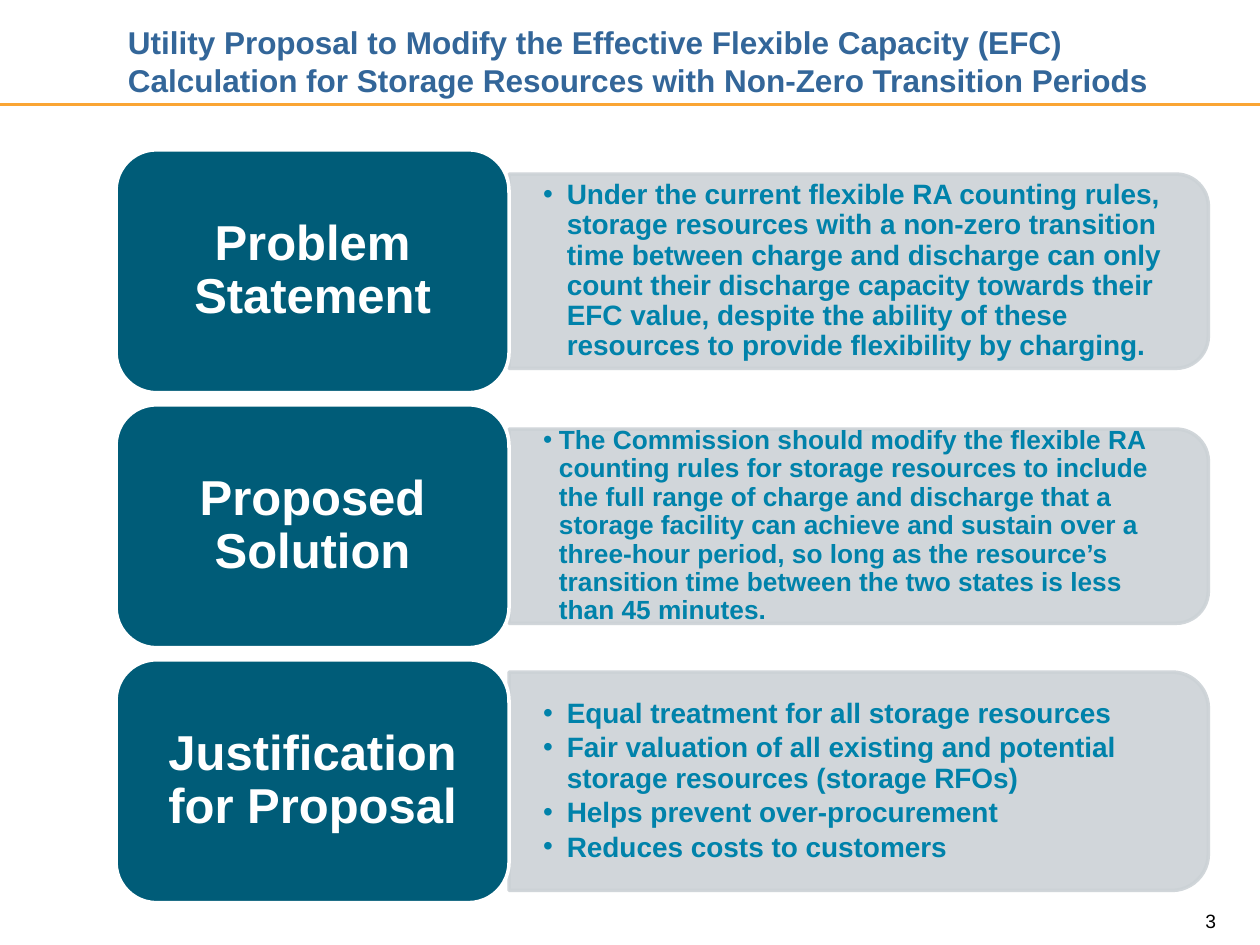
from lxml.etree import SubElement
from pptx import Presentation
from pptx.dml.color import RGBColor
from pptx.enum.shapes import MSO_CONNECTOR, MSO_SHAPE
from pptx.enum.text import MSO_ANCHOR, PP_ALIGN
from pptx.oxml.ns import qn
from pptx.util import Pt

TITLE = ("Utility Proposal to Modify the Effective Flexible Capacity (EFC) "
         "Calculation for Storage Resources with Non-Zero Transition Periods")
PAGE_NUMBER = "3"
ROWS = [
    {"label": "Problem Statement", "size": 16, "indent": 13.5, "height": 111,
     "points": ["Under the current flexible RA counting rules, storage resources with a "
                "non-zero transition time between charge and discharge can only count their "
                "discharge capacity towards their EFC value, despite the ability of these "
                "resources to provide flexibility by charging."]},
    {"label": "Proposed Solution", "size": 15, "indent": 9, "height": 111,
     "points": ["The Commission should modify the flexible RA counting rules for storage "
                "resources to include the full range of charge and discharge that a storage "
                "facility can achieve and sustain over a three-hour period, so long as the "
                "resource’s transition time between the two states is less than 45 minutes."]},
    {"label": "Justification for Proposal", "size": 16, "indent": 13.5, "height": 124.8,
     "points": ["Equal treatment for all storage resources",
                "Fair valuation of all existing and potential storage resources (storage RFOs)",
                "Helps prevent over-procurement",
                "Reduces costs to customers"]},
]

WHITE = RGBColor(0xFF, 0xFF, 0xFF)
BLACK = RGBColor(0x00, 0x00, 0x00)
ORANGE = RGBColor(0xFA, 0xA5, 0x34)
TITLE_BLUE = RGBColor(0x33, 0x66, 0x99)
DARK_TEAL = RGBColor(0x00, 0x5C, 0x78)
TEXT_TEAL = RGBColor(0x00, 0x82, 0xAA)
PANEL_GREY = RGBColor(0xCC, 0xD2, 0xD6)

LABEL_LEFT, LABEL_WIDTH, LABEL_HEIGHT = 66.3, 224.6, 138.8
PANEL_LEFT = LABEL_LEFT + LABEL_WIDTH
PANEL_WIDTH = 399.6
FIRST_CENTER, ROW_PITCH = 155, 145.7


def style_text(paragraph, size, color, bold=True):
    for run in paragraph.runs:
        run.font.name = "Arial"
        run.font.size = Pt(size)
        run.font.bold = bold
        run.font.color.rgb = color


def set_frame(frame, anchor, horizontal=7.2, vertical=3.6):
    frame.word_wrap = True
    frame.vertical_anchor = anchor
    frame.margin_left = frame.margin_right = Pt(horizontal)
    frame.margin_top = frame.margin_bottom = Pt(vertical)


def add_text(slide, box, text, size, color, anchor, align, bold):
    frame = slide.shapes.add_textbox(*map(Pt, box)).text_frame
    set_frame(frame, anchor)
    frame.text = text
    frame.paragraphs[0].alignment = align
    style_text(frame.paragraphs[0], size, color, bold)


def add_block(slide, preset, box, fill, line):
    shape = slide.shapes.add_shape(preset, *map(Pt, box))
    shape.shadow.inherit = False
    shape.fill.solid()
    shape.fill.fore_color.rgb = fill
    shape.line.color.rgb = line
    shape.line.width = Pt(2)
    return shape


def add_panel(slide, center, height):
    left = PANEL_LEFT + (PANEL_WIDTH - height) / 2
    box = (left, center - PANEL_WIDTH / 2, height, PANEL_WIDTH)
    panel = add_block(slide, MSO_SHAPE.ROUND_2_SAME_RECTANGLE, box, PANEL_GREY, PANEL_GREY)
    panel.rotation = 90
    for color in panel._element.spPr.iter(qn("a:srgbClr")):
        SubElement(color, qn("a:alpha"), val="90000")


def add_points(slide, center, row):
    height = row["height"] - 11
    box = (PANEL_LEFT, center - height / 2, PANEL_WIDTH - 6, height)
    frame = slide.shapes.add_textbox(*map(Pt, box)).text_frame
    set_frame(frame, MSO_ANCHOR.MIDDLE, 19.5, 9.8)
    frame.text = "\n".join(row["points"])
    for paragraph in frame.paragraphs:
        properties = paragraph._p.get_or_add_pPr()
        properties.set("marL", str(Pt(row["indent"])))
        properties.set("indent", str(-Pt(row["indent"])))
        SubElement(properties, qn("a:buFont"), typeface="Arial")
        SubElement(properties, qn("a:buChar"), char="•")
        paragraph.line_spacing = 0.9
        paragraph.space_after = Pt(2.4)
        style_text(paragraph, row["size"], TEXT_TEAL)


def add_label(slide, center, text):
    box = (LABEL_LEFT, center - LABEL_HEIGHT / 2, LABEL_WIDTH, LABEL_HEIGHT)
    label = add_block(slide, MSO_SHAPE.ROUNDED_RECTANGLE, box, DARK_TEAL, WHITE)
    set_frame(label.text_frame, MSO_ANCHOR.MIDDLE, 8.4, 4.2)
    label.text_frame.text = text
    paragraph = label.text_frame.paragraphs[0]
    paragraph.alignment = PP_ALIGN.CENTER
    paragraph.line_spacing = 0.9
    style_text(paragraph, 28, WHITE)


def main():
    presentation = Presentation()
    presentation.slide_width, presentation.slide_height = Pt(720), Pt(540)
    slide = presentation.slides.add_slide(presentation.slide_layouts[6])

    rule = slide.shapes.add_connector(MSO_CONNECTOR.STRAIGHT, Pt(0), Pt(59.8), Pt(720), Pt(59.8))
    rule.line.color.rgb = ORANGE
    rule.line.width = Pt(2)
    SubElement(rule._element.spPr, qn("a:effectLst"))

    add_text(slide, (638.6, 516.2, 63.4, 20.9), PAGE_NUMBER, 11, BLACK,
             MSO_ANCHOR.TOP, PP_ALIGN.RIGHT, False)
    add_text(slide, (66, 12, 636, 48), TITLE, 18, TITLE_BLUE,
             MSO_ANCHOR.BOTTOM, PP_ALIGN.LEFT, True)

    for index, row in enumerate(ROWS):
        center = FIRST_CENTER + index * ROW_PITCH
        add_panel(slide, center, row["height"])
        add_points(slide, center, row)
        add_label(slide, center, row["label"])

    presentation.save("out.pptx")


if __name__ == "__main__":
    main()
